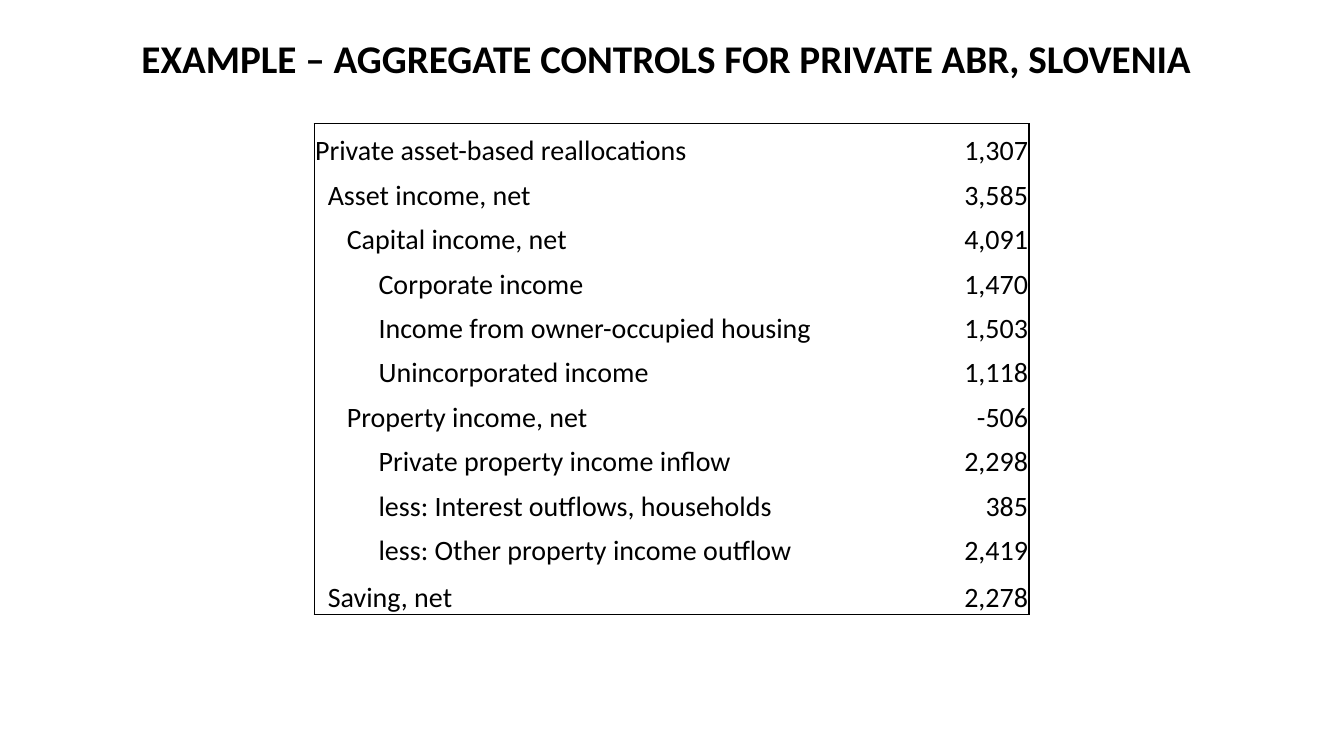
"""Build the slide with aggregate controls for private asset-based reallocations."""
from lxml import etree
from pptx import Presentation
from pptx.dml.color import RGBColor
from pptx.enum.text import MSO_ANCHOR, MSO_AUTO_SIZE, PP_ALIGN
from pptx.oxml.ns import qn
from pptx.util import Cm, Pt

LEFT, CENTER, RIGHT = PP_ALIGN.LEFT, PP_ALIGN.CENTER, PP_ALIGN.RIGHT
MIDDLE, BOTTOM = MSO_ANCHOR.MIDDLE, MSO_ANCHOR.BOTTOM
NO_AUTOFIT = MSO_AUTO_SIZE.NONE

HEADING = "EXAMPLE – AGGREGATE CONTROLS FOR PRIVATE ABR, SLOVENIA"
ACCOUNTS = [
    (0, "Private asset-based reallocations", "1,307"),
    (1, "Asset income, net", "3,585"),
    (2, "Capital income, net", "4,091"),
    (3, "Corporate income", "1,470"),
    (3, "Income from owner-occupied housing", "1,503"),
    (3, "Unincorporated income", "1,118"),
    (2, "Property income, net", "-506"),
    (3, "Private property income inflow", "2,298"),
    (3, "less: Interest outflows, households", "385"),
    (3, "less: Other property income outflow", "2,419"),
    (1, "Saving, net", "2,278"),
]
LEVEL_INDENTS = [0, 0.32, 0.8, 1.6]
INSET = 0.02
COLUMN_WIDTHS = [14.53, 3.48]
ROW_HEIGHT, LAST_ROW_HEIGHT = 1.12, 1.17
BLACK = "000000"
HEADING_FONT = {"name": "Calibri", "size": Pt(28), "bold": True}
ACCOUNT_FONT = {"name": "Calibri", "size": Pt(20), "bold": False}
HEADING_PLACE = {"left": Cm(0.81), "top": Cm(0.76), "width": Cm(31.95), "height": Cm(1.55)}
PLAIN_TABLE = {"first_row": False, "horz_banding": False}


def apply(target, values):
    for attribute, value in values.items():
        setattr(target, attribute, value)


def color(hex_string):
    return RGBColor.from_string(hex_string)


def write(frame, text, font, alignment):
    frame.text = text
    paragraph = frame.paragraphs[0]
    paragraph.alignment = alignment
    run_font = paragraph.runs[0].font
    apply(run_font, font)
    run_font.color.rgb = color(BLACK)
    return paragraph


def draw_borders(cell, visible):
    properties = cell._tc.get_or_add_tcPr()
    for side in "LRTB":
        line = etree.SubElement(properties, qn(f"a:ln{side}"), w=str(Pt(1)))
        if side in visible:
            solid = etree.SubElement(line, qn("a:solidFill"))
            etree.SubElement(solid, qn("a:srgbClr"), val=BLACK)
        else:
            etree.SubElement(line, qn("a:noFill"))


def add_heading(slide):
    heading = slide.shapes.title
    apply(heading, HEADING_PLACE)
    frame = heading.text_frame
    apply(frame, {"word_wrap": True, "auto_size": NO_AUTOFIT, "vertical_anchor": MIDDLE})
    write(frame, HEADING, HEADING_FONT, CENTER).line_spacing = 0.9


def add_accounts(slide):
    last = len(ACCOUNTS) - 1
    height = ROW_HEIGHT * last + LAST_ROW_HEIGHT
    accounts = slide.shapes.add_table(
        len(ACCOUNTS), len(COLUMN_WIDTHS),
        Cm(7.92), Cm(3.12), Cm(sum(COLUMN_WIDTHS)), Cm(height)).table
    apply(accounts, PLAIN_TABLE)
    for column, width in zip(accounts.columns, COLUMN_WIDTHS):
        column.width = Cm(width)
    for index, (level, label, amount) in enumerate(ACCOUNTS):
        row = accounts.rows[index]
        row.height = Cm(LAST_ROW_HEIGHT if index == last else ROW_HEIGHT)
        outer_edges = {0: "T", last: "B"}.get(index, "")
        entries = [(label, LEFT, "L", LEVEL_INDENTS[level]), (amount, RIGHT, "R", 0)]
        for cell, (text, alignment, side, indent) in zip(row.cells, entries):
            apply(cell, {
                "vertical_anchor": BOTTOM,
                "margin_left": Cm(INSET + indent),
                "margin_right": Cm(INSET),
                "margin_top": Cm(INSET),
                "margin_bottom": 0,
            })
            write(cell.text_frame, text, ACCOUNT_FONT, alignment)
            draw_borders(cell, side + outer_edges)
            cell.fill.background()


def main():
    deck = Presentation()
    apply(deck, {"slide_width": Cm(33.87), "slide_height": Cm(19.05)})
    slide = deck.slides.add_slide(deck.slide_layouts.get_by_name("Title Only"))
    add_heading(slide)
    add_accounts(slide)
    deck.save("out.pptx")


if __name__ == "__main__":
    main()
